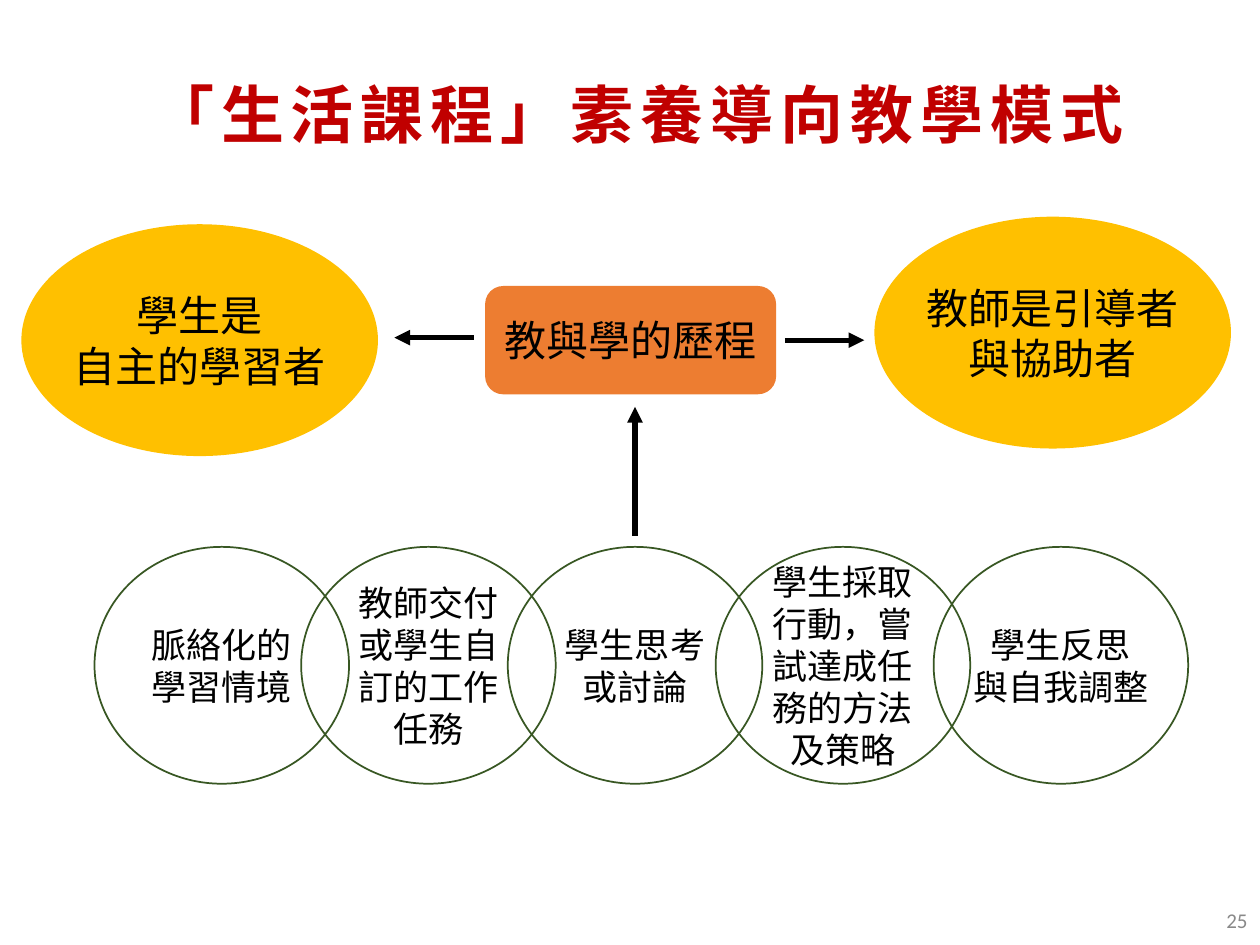
from lxml import etree
from pptx import Presentation
from pptx import util as u
from pptx.dml.color import RGBColor
from pptx.enum import shapes, text
from pptx.oxml import ns

RED = RGBColor(0xC0, 0x00, 0x00)
GOLD = RGBColor(0xFF, 0xC0, 0x00)
ORANGE = RGBColor(0xED, 0x7D, 0x31)
GREEN = RGBColor(0x38, 0x57, 0x23)
GREY = RGBColor(0x89, 0x89, 0x89)
BLACK = RGBColor(0x00, 0x00, 0x00)
CJK = "Noto Sans CJK SC"
OVAL = shapes.MSO_SHAPE.OVAL
ROUNDED = shapes.MSO_SHAPE.ROUNDED_RECTANGLE


class Deck:
    def __init__(self, prs):
        self.s = prs.slides.add_slide(prs.slide_layouts[5])

    def label(self, sp, words, size, color=BLACK, font=CJK, bold=False,
              align=text.PP_ALIGN.CENTER, spacing=0, side=0.1):
        tf = sp.text_frame
        tf.text = words
        tf.word_wrap = True
        tf.auto_size = text.MSO_AUTO_SIZE.NONE
        tf.vertical_anchor = text.MSO_ANCHOR.MIDDLE
        tf.margin_left = tf.margin_right = u.Inches(side)
        for p in tf.paragraphs:
            p.alignment = align
            p.font.name = font
            p.font.size = u.Pt(size)
            p.font.bold = bold
            p.font.color.rgb = color
            props = p.font._element
            etree.SubElement(props, ns.qn("a:ea")).set("typeface", font)
            if spacing:
                props.set("spc", str(spacing * 100))

    def title(self, box, words):
        sp = self.s.shapes.title
        sp.left, sp.top, sp.width, sp.height = map(u.Inches, box)
        self.label(sp, words, 36, RED, bold=True, spacing=4)

    def number(self, box, words):
        sp = self.s.shapes.add_textbox(*map(u.Inches, box))
        self.label(sp, words, 12, GREY, "Calibri", align=text.PP_ALIGN.RIGHT)

    def shape(self, kind, box, words, size, fill=None, line=None, side=0.1, group=None):
        parent = group or self.s
        sp = parent.shapes.add_shape(kind, *map(u.Inches, box))
        sp.shadow.inherit = False
        if fill is None:
            sp.fill.background()
        else:
            sp.fill.solid()
            sp.fill.fore_color.rgb = fill
        if line is None:
            sp.line.fill.background()
        else:
            sp.line.color.rgb = line
            sp.line.width = u.Pt(1)
        self.label(sp, words, size, side=side)

    def arrow(self, start, end):
        sp = self.s.shapes.add_connector(
            shapes.MSO_CONNECTOR.STRAIGHT, *map(u.Inches, start + end))
        sp.line.color.rgb = BLACK
        sp.line.width = u.Pt(3)
        props = sp._element.spPr
        etree.SubElement(props.find(ns.qn("a:ln")), ns.qn("a:tailEnd")).set("type", "triangle")
        etree.SubElement(props, ns.qn("a:effectLst"))


def main():
    prs = Presentation()
    prs.slide_width, prs.slide_height = u.Inches(10), u.Inches(7.5)
    deck = Deck(prs)

    deck.number((7.75, 7.1, 2.25, 0.4), "25")
    deck.title((0.35, 0.48, 9.42, 0.84), "「生活課程」素養導向教學模式")

    deck.shape(OVAL, (0.17, 1.78, 2.83, 1.84), "學生是\n自主的學習者", 24, GOLD, side=0)
    deck.shape(ROUNDED, (3.85, 2.27, 2.31, 0.86), "教與學的歷程", 24, ORANGE)
    deck.shape(OVAL, (6.94, 1.72, 2.83, 1.84), "教師是引導者與協助者", 24, GOLD, side=0)

    deck.arrow((3.76, 2.68), (3.13, 2.68))
    deck.arrow((6.23, 2.7), (6.86, 2.7))
    deck.arrow((5.04, 4.25), (5.04, 3.23))

    steps = [
        (0.75, "脈絡化的\n學習情境", 0.1),
        (2.39, "教師交付或學生自訂的工作任務", 0.1),
        (4.03, "學生思考\n或討論", 0.1),
        (5.68, "學生採取行動，嘗試達成任務的方法及策略", 0.1),
        (7.41, "學生反思\n與自我調整", 0),
    ]
    chain = deck.s.shapes.add_group_shape()
    for left, words, side in steps:
        deck.shape(OVAL, (left, 4.34, 2.02, 1.88), words, 20, line=GREEN, side=side, group=chain)

    prs.save("out.pptx")


if __name__ == "__main__":
    main()
